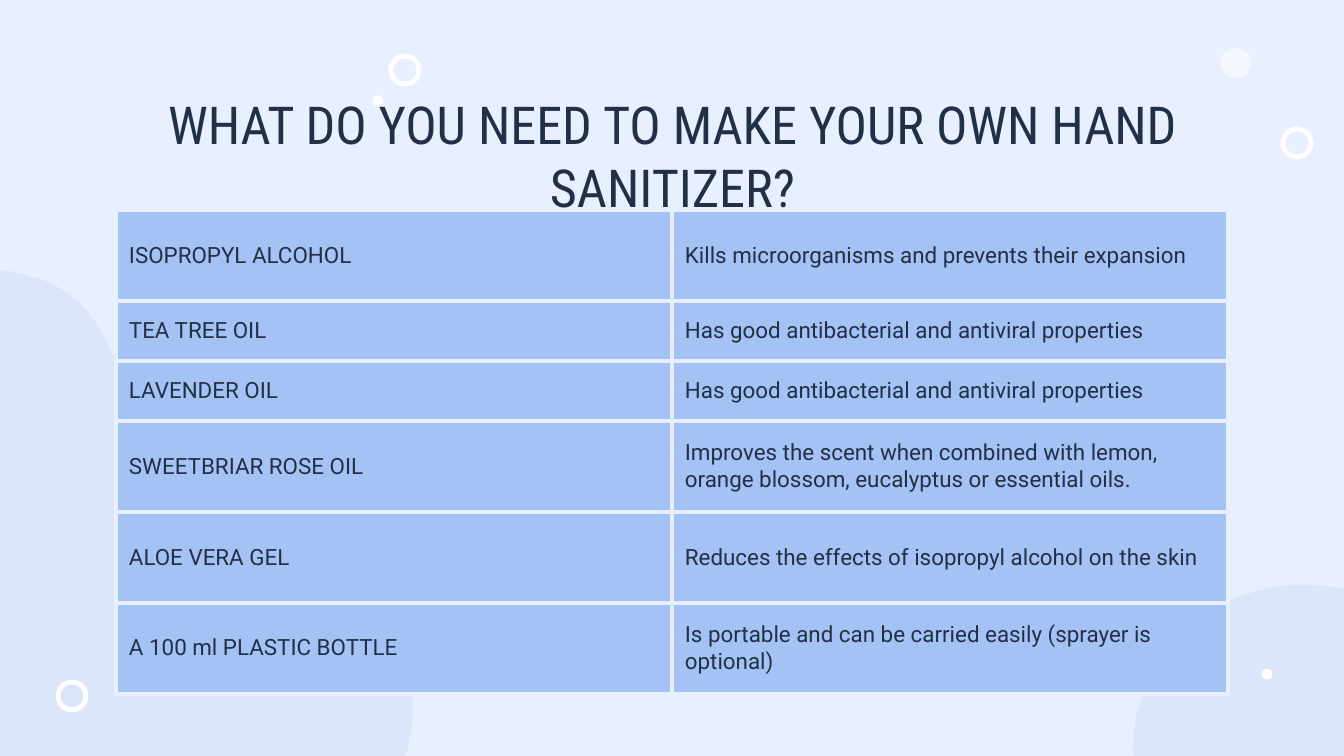
from lxml.etree import SubElement
from pptx import Presentation
from pptx.dml.color import RGBColor
from pptx.enum.shapes import MSO_SHAPE as SHAPE
from pptx.enum.text import MSO_ANCHOR as ANCHOR, PP_ALIGN as ALIGN
from pptx.oxml import parse_xml
from pptx.oxml.ns import nsdecls, qn
from pptx.util import Pt

PX = 914400 / 134.4
W, H = 1344, 756
BACK, BLOB, WHITE, CELL, INK = "E8F0FF", "DBE6FA", "FFFFFF", "A4C2F4", "223047"

TITLE = "WHAT DO YOU NEED TO MAKE YOUR OWN HAND SANITIZER?"
TITLE_BOX = (106, 79, 1133, 70)
ROWS = [
    ("ISOPROPYL ALCOHOL", "Kills microorganisms and prevents their expansion", 91),
    ("TEA TREE OIL", "Has good antibacterial and antiviral properties", 60),
    ("LAVENDER OIL", "Has good antibacterial and antiviral properties", 60),
    ("SWEETBRIAR ROSE OIL", "Improves the scent when combined with lemon, "
     "orange blossom, eucalyptus or essential oils.", 91),
    ("ALOE VERA GEL", "Reduces the effects of isopropyl alcohol on the skin", 91),
    ("A 100 ml PLASTIC BOTTLE",
     "Is portable and can be carried easily (sprayer is optional)", 91),
]
TABLE_LEFT, TABLE_TOP, COL_W = 116, 210, 556
MARGIN = 13

BLOBS = [
    [(0, 756), (0, 270), (73, 280, 105, 312, 129, 404),
     (152, 497, 214, 525, 332, 582), (449, 638, 405, 756, 405, 756)],
    [(1344, 756), (1134, 756), (1130, 715, 1148, 665, 1191, 628),
     (1228, 594, 1269, 585, 1302, 585), (1318, 585, 1332, 587, 1344, 589)],
]
RING, DOT, BUBBLE = 33, 11, 30
RINGS = [(72, 696), (405, 70), (1297, 143)]
DOTS = [(164, 680), (1267, 674), (378, 101)]
BUBBLES = [(1236, 63)]


def px(n):
    return round(n * PX)


def rgb(color):
    return RGBColor.from_string(color)


def paint(s, color):
    s.shadow.inherit = False
    s.fill.solid()
    s.fill.fore_color.rgb = rgb(color)
    s.line.fill.background()


def curve(points, steps=24):
    out = []
    for p in points:
        if len(p) == 2:
            out.append(p)
            continue
        ctrl = [out[-1], p[:2], p[2:4], p[4:]]
        for i in range(1, steps + 1):
            t = i / steps
            weights = ((1 - t) ** 3, 3 * t * (1 - t) ** 2, 3 * t * t * (1 - t), t ** 3)
            out.append(tuple(sum(w * c[k] for w, c in zip(weights, ctrl)) for k in (0, 1)))
    return out


def add_circle(slide, kind, center, size):
    x, y = center
    s = slide.shapes.add_shape(kind, px(x - size / 2), px(y - size / 2), px(size), px(size))
    paint(s, WHITE)
    return s


def write(tf, text, font, size):
    p = tf.paragraphs[0]
    r = p.add_run()
    r.text = text
    r.font.name, r.font.size = font, Pt(size)
    r.font.color.rgb = rgb(INK)
    return p


def set_margins(box):
    box.margin_left = box.margin_right = box.margin_top = box.margin_bottom = px(MARGIN)


def set_borders(cell):
    tc_pr = cell._tc.get_or_add_tcPr()
    for i, side in enumerate("LRTB"):
        tc_pr.insert(i, parse_xml(
            f'<a:ln{side} {nsdecls("a")} w="{Pt(2.25)}"><a:solidFill>'
            f'<a:srgbClr val="{BACK}"/></a:solidFill></a:ln{side}>'))


prs = Presentation()
prs.slide_width, prs.slide_height = px(W), px(H)
slide = prs.slides.add_slide(prs.slide_layouts[6])
slide.background.fill.solid()
slide.background.fill.fore_color.rgb = rgb(BACK)

for blob in BLOBS:
    start, *rest = curve(blob)
    fb = slide.shapes.build_freeform(*start, scale=PX)
    fb.add_line_segments(rest, close=True)
    paint(fb.convert_to_shape(), BLOB)

for center in BUBBLES:
    s = add_circle(slide, SHAPE.OVAL, center, BUBBLE)
    clr = s._element.spPr.find(qn("a:solidFill"))[0]
    SubElement(clr, qn("a:alpha"), val="60000")
for center in DOTS:
    add_circle(slide, SHAPE.OVAL, center, DOT)
for center in RINGS:
    add_circle(slide, SHAPE.DONUT, center, RING).adjustments[0] = 0.15

tf = slide.shapes.add_textbox(*map(px, TITLE_BOX)).text_frame
tf.word_wrap = True
set_margins(tf)
write(tf, TITLE, "Roboto Condensed", 28).alignment = ALIGN.CENTER

heights = [row[-1] for row in ROWS]
table = slide.shapes.add_table(len(ROWS), 2, px(TABLE_LEFT), px(TABLE_TOP),
                               px(2 * COL_W), px(sum(heights))).table
table.first_row = table.horz_banding = False
for col in table.columns:
    col.width = px(COL_W)
for i, (*texts, height) in enumerate(ROWS):
    table.rows[i].height = px(height)
    for j, text in enumerate(texts):
        cell = table.cell(i, j)
        cell.fill.solid()
        cell.fill.fore_color.rgb = rgb(CELL)
        cell.vertical_anchor = ANCHOR.MIDDLE
        set_margins(cell)
        set_borders(cell)
        write(cell.text_frame, text, "Roboto", 12)

prs.save("out.pptx")
